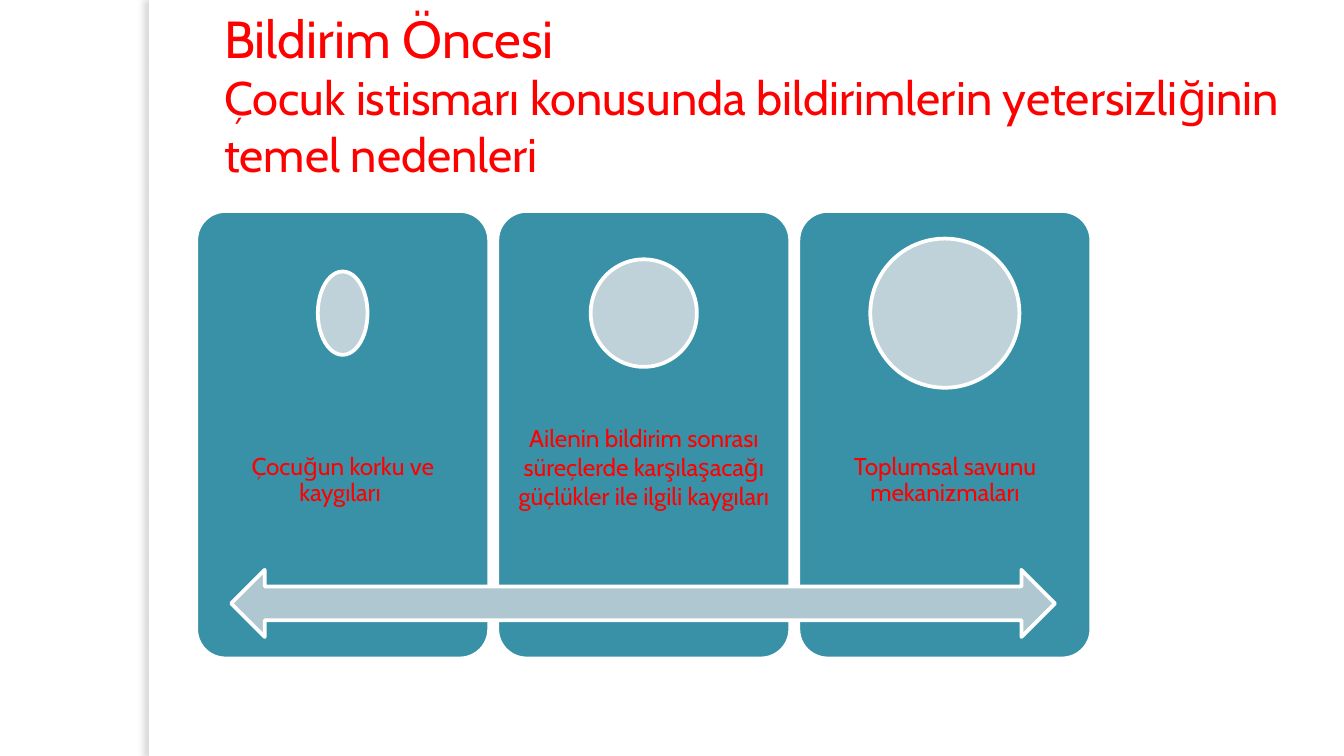
from pptx import Presentation
from pptx.dml.color import RGBColor
from pptx.enum import shapes, text
from pptx.oxml import parse_xml
from pptx.util import Inches, Pt

COLORS = {
    "white": "FFFFFF",
    "red": "FF0000",
    "card": "3891A7",
    "circle": "BFD2D9",
    "arrow": "AFC7D0",
    "shadow": "736F63",
}
FONT = "Cabin"
SHAPE = shapes.MSO_SHAPE
DRAWING_NS = "http://schemas.openxmlformats.org/drawingml/2006/main"

CARD_LEFT, CARD_TOP, CARD_WIDTH, CARD_HEIGHT = 1.46, 1.57, 2.18, 3.33
CARD_STEP = 2.24
CIRCLE_MIDDLE = 2.33
LABEL_TOP, LABEL_HEIGHT = 2.91, 1.33

CARDS = [
    ("Çocuğun korku ve kaygıları ", 0.37, 0.62, 0.9, 0.1),
    ("Ailenin bildirim sonrası süreçlerde karşılaşacağı güçlükler ile ilgili kaygıları",
     0.79, 0.8, 1.0, 0.3),
    ("Toplumsal savunu mekanizmaları", 1.11, 1.11, 0.9, 0.1),
]


def color(name):
    return RGBColor.from_string(COLORS[name])


def add_figure(slide, kind, left, top, width, height, fill, outlined=True):
    figure = slide.shapes.add_shape(
        kind, Inches(left), Inches(top), Inches(width), Inches(height))
    figure.shadow.inherit = False
    figure.fill.solid()
    figure.fill.fore_color.rgb = color(fill)
    if outlined:
        figure.line.color.rgb = color("white")
        figure.line.width = Pt(2)
    else:
        figure.line.fill.background()
    return figure


def add_text(slide, left, top, width, height):
    box = slide.shapes.add_textbox(
        Inches(left), Inches(top), Inches(width), Inches(height))
    frame = box.text_frame
    frame.word_wrap = True
    frame.vertical_anchor = text.MSO_ANCHOR.MIDDLE
    para = frame.paragraphs[0]
    para.font.name = FONT
    para.font.color.rgb = color("red")
    return frame, para


def add_span(para, words, size):
    span = para.add_run()
    span.text = words
    span.font.size = Pt(size)


def add_side_edge(slide):
    edge = add_figure(slide, SHAPE.RECTANGLE, 1.11, 0, 0.08, 5.63, "white", outlined=False)
    effects = edge._element.spPr.find(f"{{{DRAWING_NS}}}effectLst")
    effects.append(parse_xml(
        f'<a:outerShdw xmlns:a="{DRAWING_NS}" blurRad="{Pt(3)}" dist="{Pt(3)}" '
        f'dir="10800000" algn="tl" rotWithShape="0">'
        f'<a:srgbClr val="{COLORS["shadow"]}"><a:alpha val="25000"/></a:srgbClr>'
        f'</a:outerShdw>'))


def add_title(slide):
    _, para = add_text(slide, 1.57, 0.23, 8.2, 0.94)
    add_span(para, "Bildirim Öncesi ", 27.9)
    para.add_line_break()
    add_span(para, "Çocuk istismarı konusunda bildirimlerin yetersizliğinin temel nedenleri", 25.2)


def add_card(slide, left, label, circle_width, circle_height, spacing, bottom_inset):
    card = add_figure(slide, SHAPE.ROUNDED_RECTANGLE, left, CARD_TOP,
                      CARD_WIDTH, CARD_HEIGHT, "card")
    card.adjustments[0] = 0.1

    frame, para = add_text(slide, left, LABEL_TOP, CARD_WIDTH, LABEL_HEIGHT)
    frame.margin_left = frame.margin_right = frame.margin_top = Inches(0.1)
    frame.margin_bottom = Inches(bottom_inset)
    para.alignment = text.PP_ALIGN.CENTER
    para.line_spacing = spacing
    add_span(para, label, 13)

    add_figure(slide, SHAPE.OVAL, left + (CARD_WIDTH - circle_width) / 2,
               CIRCLE_MIDDLE - circle_height / 2, circle_width, circle_height, "circle")


def main():
    deck = Presentation()
    deck.slide_width = Inches(10)
    deck.slide_height = deck.slide_width * 9 // 16
    slide = deck.slides.add_slide(deck.slide_layouts[6])
    add_side_edge(slide)
    add_title(slide)
    for index, card in enumerate(CARDS):
        add_card(slide, CARD_LEFT + index * CARD_STEP, *card)
    add_figure(slide, SHAPE.LEFT_RIGHT_ARROW, 1.72, 4.24, 6.13, 0.5, "arrow")
    deck.save("out.pptx")


if __name__ == "__main__":
    main()
